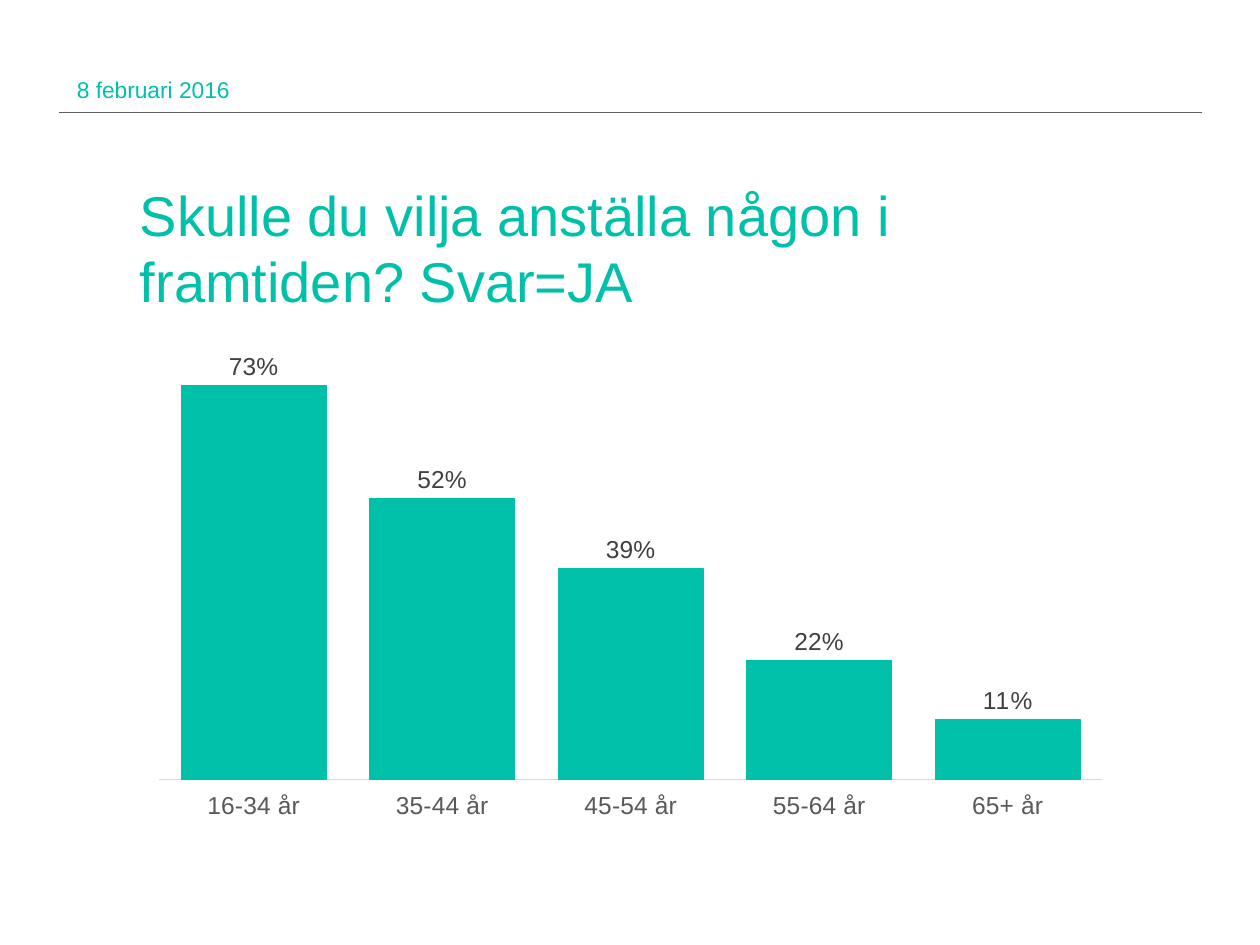
from pptx import Presentation
from pptx.chart.data import CategoryChartData
from pptx.dml.color import RGBColor
from pptx.enum.chart import XL_CHART_TYPE, XL_LABEL_POSITION, XL_TICK_LABEL_POSITION, XL_TICK_MARK
from pptx.enum.shapes import MSO_CONNECTOR
from pptx.enum.text import MSO_ANCHOR
from pptx.oxml.ns import qn
from pptx.util import Cm, Pt

COLUMN = XL_CHART_TYPE.COLUMN_CLUSTERED
OUTSIDE_END = XL_LABEL_POSITION.OUTSIDE_END
LABELS_LOW = XL_TICK_LABEL_POSITION.LOW
NO_TICKS = XL_TICK_MARK.NONE
STRAIGHT = MSO_CONNECTOR.STRAIGHT
TOP, MIDDLE = MSO_ANCHOR.TOP, MSO_ANCHOR.MIDDLE

FONT = "Arial"
TEAL = "00C0A9"
LEFT, WIDTH = 2.82, 19.79
SHARES = {
    "16-34 år": 0.73,
    "35-44 år": 0.52,
    "45-54 år": 0.39,
    "55-64 år": 0.22,
    "65+ år": 0.11,
}


def rgb(value):
    return RGBColor.from_string(value)


def set_font(font, size, color):
    for name, value in {"name": FONT, "size": Pt(size), "bold": False}.items():
        setattr(font, name, value)
    font.color.rgb = rgb(color)


def set_line(line, color, width):
    line.color.rgb = rgb(color)
    line.width = Pt(width)


def add_text(s, text, box, size, anchor, spacing=None, top=0):
    tf = s.shapes.add_textbox(*map(Cm, box)).text_frame
    frame = {
        "word_wrap": True,
        "vertical_anchor": anchor,
        "margin_left": 0,
        "margin_right": 0,
        "margin_top": Cm(top),
        "margin_bottom": 0,
    }
    for name, value in frame.items():
        setattr(tf, name, value)
    p = tf.paragraphs[0]
    if spacing:
        p.line_spacing = Pt(spacing)
    r = p.add_run()
    r.text = text
    set_font(r.font, size, TEAL)


def add_rule(s, x1, x2, y):
    rule = s.shapes.add_connector(STRAIGHT, Cm(x1), Cm(y), Cm(x2), Cm(y))
    set_line(rule.line, "606060", 0.5)
    sp_pr = rule._element.spPr
    sp_pr.append(sp_pr.makeelement(qn("a:effectLst"), {}))


def add_column_chart(s, shares, box):
    data = CategoryChartData(number_format="0%")
    data.categories = list(shares)
    data.add_series("Series 1", list(shares.values()))
    chart = s.shapes.add_chart(COLUMN, *map(Cm, box), data).chart
    chart.has_legend = False
    chart.has_title = False
    set_font(chart.font, 10, "000000")

    axis = chart.category_axis
    axis_format = {
        "major_tick_mark": NO_TICKS,
        "minor_tick_mark": NO_TICKS,
        "tick_label_position": LABELS_LOW,
        "has_major_gridlines": False,
    }
    for name, value in axis_format.items():
        setattr(axis, name, value)
    set_font(axis.tick_labels.font, 14, "595959")
    set_line(axis.format.line, "D9D9D9", 0.75)

    values = chart.value_axis
    scale = {
        "visible": False,
        "has_major_gridlines": False,
        "minimum_scale": 0,
        "maximum_scale": 0.8,
    }
    for name, value in scale.items():
        setattr(values, name, value)

    plot = chart.plots[0]
    plot.gap_width = 30
    plot.vary_by_categories = False
    series = plot.series[0]
    series.format.fill.solid()
    series.format.fill.fore_color.rgb = rgb(TEAL)
    set_line(series.format.line, TEAL, 0.75)

    labels = series.data_labels
    label_format = {
        "show_value": True,
        "number_format": "0%",
        "number_format_is_linked": False,
        "position": OUTSIDE_END,
    }
    for name, value in label_format.items():
        setattr(labels, name, value)
    set_font(labels.font, 14, "404040")


def main():
    prs = Presentation()
    prs.slide_width, prs.slide_height = Cm(25.4), Cm(19.05)
    s = prs.slides.add_slide(prs.slide_layouts[6])
    add_rule(s, 1.19, 24.23, 2.27)
    add_text(s, "Skulle du vilja anställa någon i framtiden? Svar=JA",
             (LEFT, 3.58, WIDTH, 2.44), 32, TOP, spacing=38, top=0.07)
    add_text(s, "8 februari 2016", (1.55, 1.3, 5.92, 1.02), 13, MIDDLE)
    add_column_chart(s, SHARES, (LEFT, 6.81, WIDTH, 9.91))
    prs.save("out.pptx")


if __name__ == "__main__":
    main()
